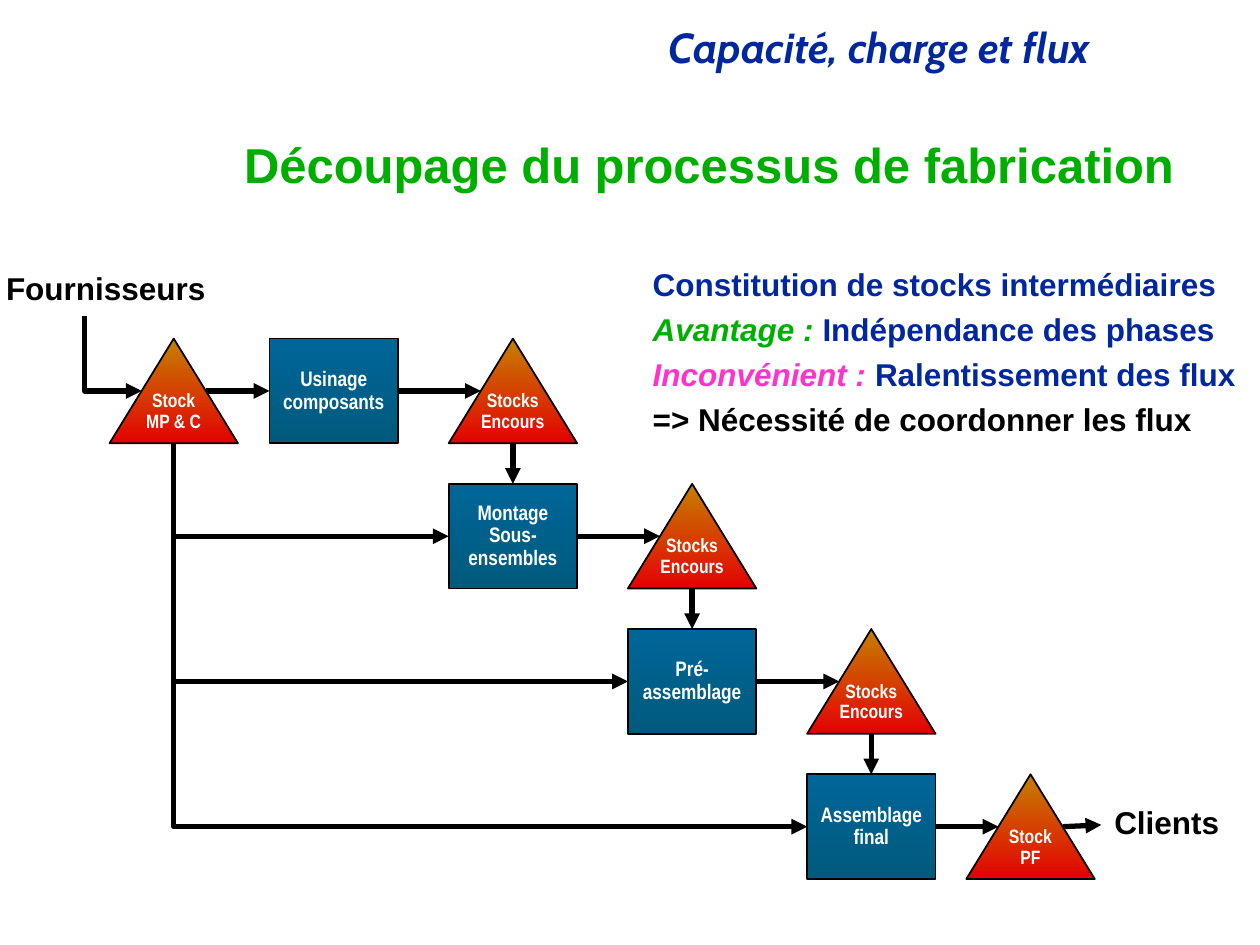
from collections import namedtuple
from dataclasses import dataclass

from lxml.etree import SubElement
from pptx import Presentation
from pptx.dml.color import RGBColor
from pptx.enum.shapes import MSO_CONNECTOR, MSO_SHAPE
from pptx.enum.text import MSO_ANCHOR, PP_ALIGN
from pptx.oxml.ns import qn
from pptx.util import Pt


@dataclass(frozen=True)
class Theme:
    blue: str = "00279F"
    green: str = "00AE00"
    pink: str = "FF33CC"
    black: str = "000000"
    white: str = "FFFFFF"
    steel: tuple = ("006699", "005A7C")
    flame: tuple = ("C68000", "E30202")
    sans: str = "Arial"
    slim: str = "Arial Narrow"
    head: str = "Cabin"
    head_size: int = 24
    title_size: int = 28
    body_size: int = 18
    step_size: int = 12
    stock_size: int = 11


THEME = Theme()
Box = namedtuple("Box", "left top width height")


def style(run, size, color, font=THEME.sans, italic=False):
    run.font.size, run.font.name = Pt(size), font
    run.font.bold, run.font.italic = True, italic
    run.font.color.rgb = RGBColor.from_string(color)


def write(frame, text, align, *look, **more):
    frame.text = text
    for para in frame.paragraphs:
        para.alignment, para.line_spacing = align, 0.9
        for run in para.runs:
            style(run, *look, **more)


def text_box(slide, box, wrap=True):
    frame = slide.shapes.add_textbox(*map(Pt, box)).text_frame
    frame.word_wrap = wrap
    return frame


# Header and title
def heading(slide, box):
    frame = text_box(slide, Box(box.left + 6.2, box.top, 545.8, 33.1))
    write(frame, "Capacité, charge et flux", PP_ALIGN.RIGHT,
          THEME.head_size, THEME.blue, THEME.head, italic=True)

    title = slide.shapes.title
    title.left, title.top = Pt(box.left), Pt(box.top + 65.5)
    title.width, title.height = Pt(box.width), Pt(36)
    title.text_frame.vertical_anchor = MSO_ANCHOR.MIDDLE
    write(title.text_frame, "Découpage du processus de fabrication",
          PP_ALIGN.RIGHT, THEME.title_size, THEME.green)


# Remarks: each line is a list of (text, colour, italic)
def remarks(slide, box):
    lines = [
        [("Constitution de stocks intermédiaires", THEME.blue, False)],
        [("Avantage : ", THEME.green, True),
         ("Indépendance des phases", THEME.blue, False)],
        [("Inconvénient : ", THEME.pink, True),
         ("Ralentissement des flux", THEME.blue, False)],
        [("=> Nécessité de coordonner les flux", THEME.black, False)],
    ]
    frame = text_box(slide, box)
    frame.margin_left = Pt(25.2)
    for i, line in enumerate(lines):
        para = frame.add_paragraph() if i else frame.paragraphs[0]
        para.line_spacing, para.space_before = 0.9, Pt(6.2)
        for text, color, italic in line:
            run = para.add_run()
            run.text = text
            style(run, THEME.body_size, color, italic=italic)


def block(slide, kind, box, text, colors, size, inset):
    shape = slide.shapes.add_shape(kind, *map(Pt, box))
    shape.shadow.inherit = False
    shape.fill.gradient()
    shape.fill.gradient_angle = 270
    for stop, color in zip(shape.fill.gradient_stops, colors):
        stop.color.rgb = RGBColor.from_string(color)
    for stop, place in zip(shape.fill.gradient_stops, (0, 1)):
        stop.position = place
    shape.line.color.rgb = RGBColor.from_string(THEME.black)
    shape.line.width = Pt(1)
    frame = shape.text_frame
    frame.word_wrap = True
    frame.margin_left = frame.margin_right = Pt(inset[0])
    frame.margin_top = frame.margin_bottom = Pt(inset[1])
    write(frame, text, PP_ALIGN.CENTER, size, THEME.white, THEME.slim)
    return shape


def step(slide, box, text):
    shape = block(slide, MSO_SHAPE.RECTANGLE, box, text, THEME.steel,
                  THEME.step_size, (2.9, 3.6))
    shape.text_frame.vertical_anchor = MSO_ANCHOR.MIDDLE
    return shape


def stock(slide, box, text):
    shape = block(slide, MSO_SHAPE.ISOSCELES_TRIANGLE, box, text, THEME.flame,
                  THEME.stock_size, (0, 0))
    shape.text_frame.vertical_anchor = MSO_ANCHOR.TOP
    return shape


def label(slide, box, text):
    write(text_box(slide, box, wrap=False), text, PP_ALIGN.CENTER,
          THEME.body_size, THEME.black)


def arrow(slide, start, end, kind=MSO_CONNECTOR.STRAIGHT):
    link = slide.shapes.add_connector(kind, *map(Pt, start + end))
    link.line.color.rgb = RGBColor.from_string(THEME.black)
    link.line.width = Pt(3)
    props = link.element.spPr
    SubElement(props.find(qn("a:ln")), qn("a:tailEnd"), type="triangle")
    SubElement(props, qn("a:effectLst"))
    return link


# Goes down, then right: a one-bend connector turned a quarter
def bend(slide, start, end, source=None, target=None):
    link = arrow(slide, start, end, MSO_CONNECTOR.ELBOW)
    if source:
        link.begin_connect(source, 3)
    if target:
        link.end_connect(target, 1)
    wide, high = end[0] - start[0], end[1] - start[1]
    link.left = Pt((start[0] + end[0] - high) / 2)
    link.top = Pt((start[1] + end[1] - wide) / 2)
    link.width, link.height = Pt(high), Pt(wide)
    props = link.element.spPr
    props.find(qn("a:prstGeom")).set("prst", "bentConnector2")
    frame = props.find(qn("a:xfrm"))
    frame.set("rot", "16200000")
    frame.set("flipH", "1")


# Process flow: a staircase of steps, each followed by a stock
def flow(slide, box):
    wide, high = 73.4, 59.8
    names = ["Usinage\ncomposants", "Montage\nSous-ensembles",
             "Pré-\nassemblage", "Assemblage\nfinal"]
    stores = ["Stocks\nEncours"] * 3 + ["Stock\nPF"]
    cols = [box.left + 154 + 102.4 * i for i in range(4)]
    rows = [box.top + 43.5 + 83 * i for i in range(4)]
    ends = cols[1:] + [box.left + 552.2]
    first = box.left + 62.6

    steps = [step(slide, Box(x, y, wide, high), name)
             for x, y, name in zip(cols, rows, names)]
    raw = stock(slide, Box(first, rows[0], wide, high), "Stock\nMP & C")
    for x, y, name in zip(ends, rows, stores):
        stock(slide, Box(x, y, wide, high), name)

    label(slide, Box(box.left - 4.3, box.top + 2.6, 129.6, 26.6), "Fournisseurs")
    label(slide, Box(box.left + 629.3, box.top + 307.9, 74.9, 26.6), "Clients")

    # Each step to its stock, each stock down to the next step
    for i, (x, y, end) in enumerate(zip(cols, rows, ends)):
        mid = y + high / 2
        link = arrow(slide, (x + wide, mid), (end + wide / 4, mid))
        link.begin_connect(steps[i], 3)
        if i < 3:
            hub = end + wide / 2
            link = arrow(slide, (hub, y + high), (hub, rows[i + 1]))
            link.end_connect(steps[i + 1], 0)

    # Raw stock to every step
    mid = rows[0] + high / 2
    link = arrow(slide, (first + wide * 3 / 4, mid), (cols[0], mid))
    link.end_connect(steps[0], 1)
    for i in range(1, 4):
        bend(slide, (first + wide / 2, rows[0] + high),
             (cols[i], rows[i] + high / 2), raw, steps[i])

    # Suppliers in, customers out
    bend(slide, (box.left + 48.2, box.top + 30.7), (first + wide / 4, mid),
         target=raw)
    last = rows[3] + high / 2
    arrow(slide, (ends[3] + wide * 3 / 4, last), (box.left + 629.3, last - 1))


def main():
    deck = Presentation()
    deck.slide_width, deck.slide_height = Pt(720), Pt(540)
    slide = deck.slides.add_slide(deck.slide_layouts[5])
    heading(slide, Box(78, 12.2, 600, 102))
    remarks(slide, Box(347.8, 150.5, 372.2, 113.8))
    flow(slide, Box(0, 150, 720, 355))
    deck.save("out.pptx")


if __name__ == "__main__":
    main()
